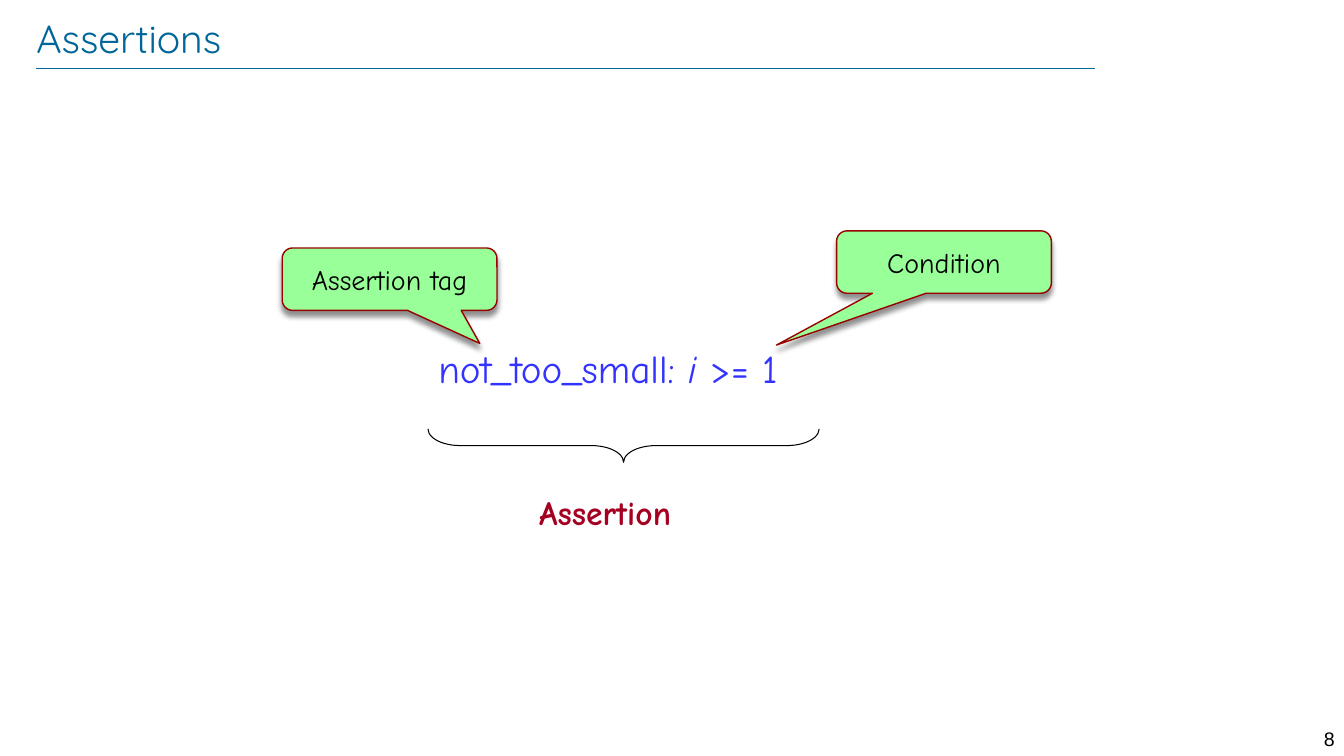
"""Build the Assertions slide: an annotated assertion with two callouts and a brace."""
from lxml import etree
from pptx import Presentation
from pptx.dml.color import RGBColor
from pptx.enum import shapes, text
from pptx.oxml.ns import qn
from pptx.util import Pt


def rgb(value):
    """Turn a hex string into a colour."""
    return RGBColor.from_string(value)


def write(sp, runs, color, align="LEFT", anchor="TOP", insets=(7.2, 3.6), **fmt):
    """Fill a shape with one paragraph of (text, italic) runs."""
    tf = sp.text_frame
    x, y = insets
    frame = {"word_wrap": True, "vertical_anchor": text.MSO_ANCHOR[anchor],
             "margin_left": Pt(x), "margin_right": Pt(x),
             "margin_top": Pt(y), "margin_bottom": Pt(y)}
    for key, value in frame.items():
        setattr(tf, key, value)
    p = tf.paragraphs[0]
    p.alignment = text.PP_ALIGN[align]
    for content, italic in runs:
        r = p.add_run()
        r.text = content
        r.font.color.rgb = rgb(color)
        for key, value in {**fmt, "italic": italic}.items():
            setattr(r.font, key, value)


prs = Presentation()
prs.slide_width, prs.slide_height = Pt(960), Pt(540)
s = prs.slides.add_slide(prs.slide_layouts[6])

rule = s.shapes.add_connector(shapes.MSO_CONNECTOR.STRAIGHT, Pt(26), Pt(48.4), Pt(782), Pt(48.4))
rule.line.color.rgb = rgb("006699")
rule.line.width = Pt(0.25)
etree.SubElement(rule._element.spPr, qn("a:effectLst"))

labels = [
    ((907.2, 515.5, 53.3, 17.3), [("8", False)], "000000",
     {"align": "RIGHT", "name": "Arial", "size": Pt(14)}),
    ((26, 9.4, 833.8, 34.6), [("Assertions", False)], "006699",
     {"anchor": "MIDDLE", "insets": (0, 0), "name": "Quicksand", "size": Pt(28)}),
    ((306, 242.6, 281.5, 41), [("not_too_small: ", False), ("i", True), (" >= 1", False)], "3333FF",
     {"name": "Comic Neue", "size": Pt(28)}),
    ((378, 347.8, 124.6, 36), [("Assertion", False)], "A50021",
     {"name": "Comic Neue", "size": Pt(24), "bold": True}),
]
for box, runs, color, fmt in labels:
    write(s.shapes.add_textbox(*map(Pt, box)), runs, color, **fmt)

brace = s.shapes.add_shape(shapes.MSO_SHAPE.RIGHT_BRACE, Pt(433.5), Pt(178.6), Pt(23.8), Pt(279.4))
brace.rotation = 90
brace.adjustments[0] = 0.97
brace.shadow.inherit = False
brace.fill.background()
brace.line.color.rgb = rgb("000000")
brace.line.width = Pt(0.75)

callouts = [("Condition", 597.6, 164.9, (-0.78, 1.33)),
            ("Assertion tag", 201.6, 177.1, (0.42, 1.03))]
for label, left, top, tip in callouts:
    sp = s.shapes.add_shape(shapes.MSO_SHAPE.ROUNDED_RECTANGULAR_CALLOUT,
                            Pt(left), Pt(top), Pt(153.4), Pt(44.6))
    sp.adjustments[0], sp.adjustments[1] = tip
    sp.fill.solid()
    sp.fill.fore_color.rgb = rgb("99FF99")
    sp.line.color.rgb = rgb("990000")
    sp.line.width = Pt(1)
    sp.shadow.inherit = False
    shadow = etree.SubElement(sp._element.spPr.find(qn("a:effectLst")), qn("a:outerShdw"),
                              blurRad=str(Pt(4)), dist=str(Pt(4)), dir="5400000", rotWithShape="0")
    black = etree.SubElement(shadow, qn("a:srgbClr"), val="000000")
    etree.SubElement(black, qn("a:alpha"), val="43000")
    write(sp, [(label, False)], "000000", align="CENTER", anchor="MIDDLE", insets=(0, 3.6),
          name="Comic Neue", size=Pt(20))

prs.save("out.pptx")
